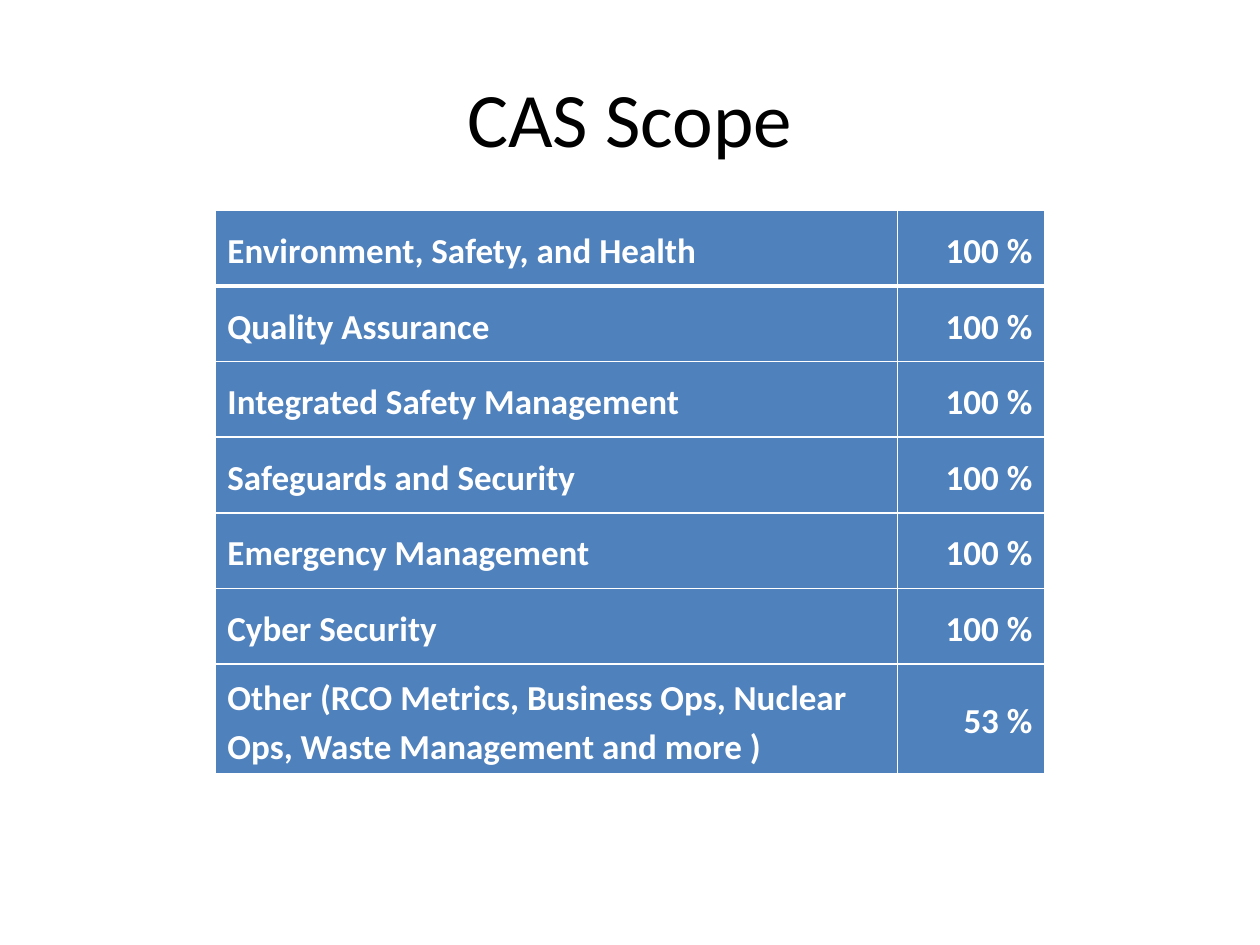
from dataclasses import dataclass

from lxml import etree
from pptx import Presentation
from pptx import util as u
from pptx.dml.color import RGBColor
from pptx.enum import text
from pptx.oxml import ns


@dataclass(frozen=True)
class Theme:
    font: str = "Calibri"
    title_size: int = 44
    cell_size: int = 20
    ink: str = "000000"
    paper: str = "FFFFFF"
    accent: str = "4F81BD"
    thin: int = 1
    thick: int = 3


theme = Theme()


def write(frame, words, *, size, color, align, bold=False, spacing=None):
    frame.word_wrap = True
    para = frame.paragraphs[0]
    para.alignment = align
    para.line_spacing = spacing
    span = para.add_run()
    span.text = words
    span.font.name = theme.font
    span.font.size = u.Pt(size)
    span.font.bold = bold
    span.font.color.rgb = RGBColor.from_string(color)


def add_border(cell, side, width):
    """Rule one side (L, R, T or B) of a cell; call before filling the cell."""
    properties = cell._tc.get_or_add_tcPr()
    line = etree.SubElement(properties, ns.qn(f"a:ln{side}"), w=str(u.Pt(width)))
    fill = etree.SubElement(line, ns.qn("a:solidFill"))
    etree.SubElement(fill, ns.qn("a:srgbClr"), val=theme.paper)


deck = Presentation()
deck.slide_width, deck.slide_height = u.Inches(10), u.Inches(7.5)
page = deck.slides.add_slide(deck.slide_layouts[6])
W, H = deck.slide_width, deck.slide_height

# Title
box = page.shapes.add_textbox(int(W * 0.05), int(H * 0.04), int(W * 0.9), int(H / 6))
box.text_frame.vertical_anchor = text.MSO_ANCHOR.MIDDLE
write(box.text_frame, "CAS Scope", size=theme.title_size, color=theme.ink,
      align=text.PP_ALIGN.CENTER)

# Scope table
scope = [
    ("Environment, Safety, and Health", "100 %"),
    ("Quality Assurance", "100 %"),
    ("Integrated Safety Management", "100 %"),
    ("Safeguards and Security", "100 %"),
    ("Emergency Management", "100 %"),
    ("Cyber Security", "100 %"),
    ("Other (RCO Metrics, Business Ops, Nuclear Ops, Waste Management and more )", "53 %"),
]
column_widths = [u.Inches(5.42), u.Inches(1.17)]
row_heights = [u.Inches(0.6)] * (len(scope) - 1) + [u.Inches(0.71)]
alignments = [text.PP_ALIGN.LEFT, text.PP_ALIGN.RIGHT]

table_width = sum(column_widths)
table = page.shapes.add_table(len(scope), len(column_widths), (W - table_width) // 2,
                              u.Inches(1.67), table_width, sum(row_heights)).table
for column, width in zip(table.columns, column_widths):
    column.width = width

for r, (entry, height) in enumerate(zip(scope, row_heights)):
    table.rows[r].height = height
    for c, (words, align) in enumerate(zip(entry, alignments)):
        cell = table.cell(r, c)
        cell.vertical_anchor = text.MSO_ANCHOR.MIDDLE
        for side in "LRTB":
            under_header = (r, side) in [(0, "B"), (1, "T")]
            add_border(cell, side, theme.thick if under_header else theme.thin)
        cell.fill.solid()
        cell.fill.fore_color.rgb = RGBColor.from_string(theme.accent)
        write(cell.text_frame, words, size=theme.cell_size, color=theme.paper,
              align=align, bold=True, spacing=1.15)

deck.save("out.pptx")
